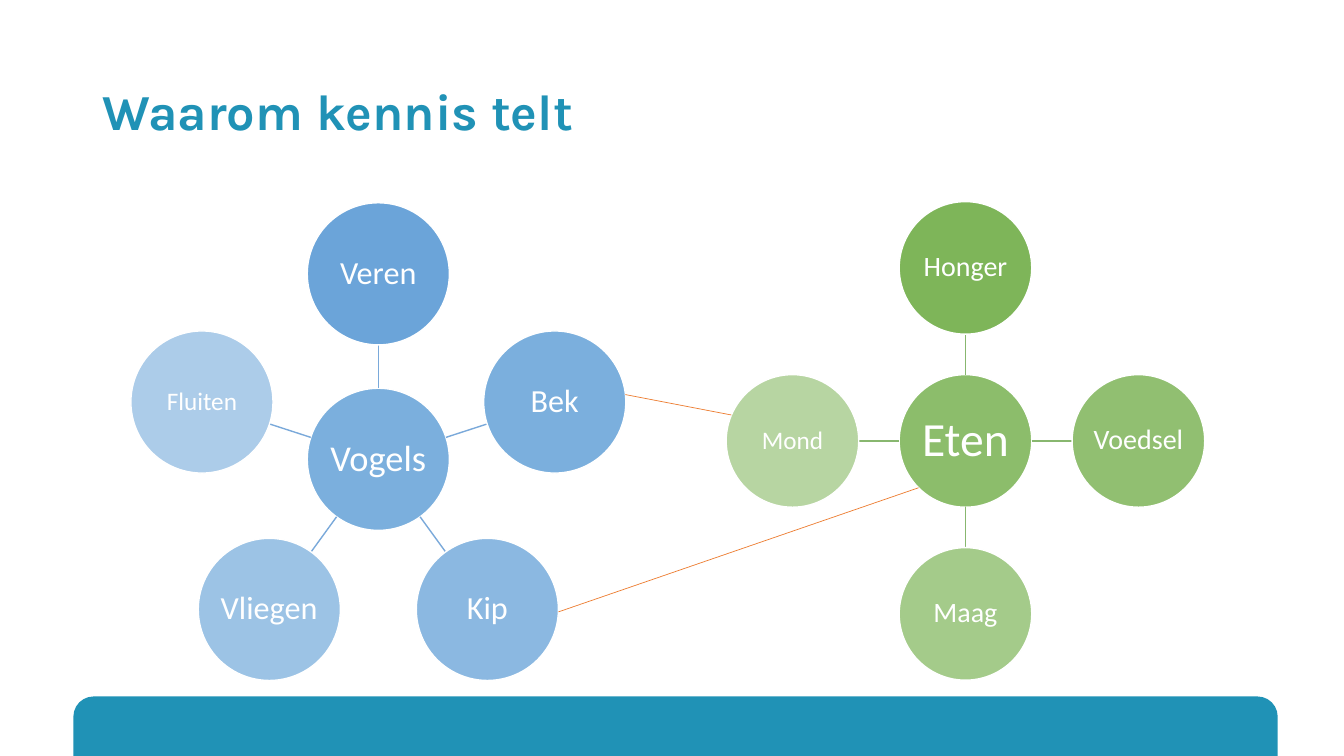
"""Builds the slide "Waarom kennis telt" with two linked concept clusters."""
from math import cos, radians, sin

from lxml import etree
from pptx import Presentation
from pptx.dml.color import RGBColor
from pptx.enum.shapes import MSO_CONNECTOR, MSO_SHAPE
from pptx.enum.text import MSO_ANCHOR, PP_ALIGN
from pptx.oxml.ns import qn
from pptx.util import Cm, Pt

STRAIGHT = MSO_CONNECTOR.STRAIGHT
ELLIPSE = MSO_SHAPE.OVAL
ROUNDED_TOP = MSO_SHAPE.ROUND_2_SAME_RECTANGLE
MIDDLE = MSO_ANCHOR.MIDDLE
LEFT, CENTER = PP_ALIGN.LEFT, PP_ALIGN.CENTER

TEAL = RGBColor(0x20, 0x92, 0xB6)
WHITE = RGBColor(0xFF, 0xFF, 0xFF)
BLUE = RGBColor(0x5B, 0x9B, 0xD5)
BLUE_SPOKE = RGBColor(0x7A, 0xA9, 0xDA)
GREEN = RGBColor(0x70, 0xAD, 0x47)
GREEN_SPOKE = RGBColor(0x88, 0xB7, 0x6F)
ORANGE = RGBColor(0xED, 0x7D, 0x31)

NODE_SHARE = 0.277
LINE_SPACING = 0.9

BIRDS_BOX = (3.07, 5.11, 12.93)
BIRDS_HUB = ("Vogels", 26, 80)
BIRDS_NODES = [("Veren", 23, 90), ("Bek", 23, 80), ("Kip", 23, 70),
               ("Vliegen", 23, 60), ("Fluiten", 18, 50)]
FOOD_BOX = (18.3, 5.08, 12.06)
FOOD_HUB = ("Eten", 34, 80)
FOOD_NODES = [("Honger", 20, 90), ("Voedsel", 20, 77), ("Maag", 20, 63),
              ("Mond", 18, 50)]


def around(center, distance, angle):
    """Return the point at a distance and counterclockwise angle from a centre."""
    x, y = center
    return (x + distance * cos(radians(angle)),
            y - distance * sin(radians(angle)))


def style_text(frame, size, font, color, align, bold=False):
    """Format the single paragraph of a text frame."""
    frame.vertical_anchor = MIDDLE
    paragraph = frame.paragraphs[0]
    paragraph.alignment = align
    paragraph.line_spacing = LINE_SPACING
    run_font = paragraph.runs[0].font
    run_font.name, run_font.size, run_font.bold = font, Pt(size), bold
    run_font.color.rgb = color


def add_link(slide, start, end, color, width):
    """Draw a straight line between two points in centimetres."""
    link = slide.shapes.add_connector(
        STRAIGHT, *(Cm(value) for value in (*start, *end)))
    link.line.color.rgb = color
    link.line.width = Pt(width)
    etree.SubElement(link._element.spPr, qn("a:effectLst"))


def add_node(slide, center, diameter, concept, color):
    """Draw one translucent circle with its word inside."""
    word, size, opacity = concept
    x, y = center
    node = slide.shapes.add_shape(
        ELLIPSE, Cm(x - diameter / 2), Cm(y - diameter / 2),
        Cm(diameter), Cm(diameter))
    node.shadow.inherit = False
    node.fill.solid()
    node.fill.fore_color.rgb = color
    tint = node._element.spPr.find(qn("a:solidFill"))[0]
    etree.SubElement(tint, qn("a:alpha"), val=str(opacity * 1000))
    node.line.color.rgb = WHITE
    node.line.width = Pt(1)
    frame = node.text_frame
    frame.text = word
    frame.word_wrap = False
    frame.margin_left = frame.margin_right = Cm(0.05)
    frame.margin_top = frame.margin_bottom = Cm(0.05)
    style_text(frame, size, "Calibri", WHITE, CENTER)


def add_cluster(slide, box, hub, concepts, color, spoke_color):
    """Draw a hub ringed by concepts; return a lookup of points on their rims."""
    left, top, side = box
    diameter = NODE_SHARE * side
    radius, orbit = diameter / 2, (side - diameter) / 2
    middle = (left + side / 2, top + side / 2)
    centers = {hub[0]: middle}
    add_node(slide, middle, diameter, hub, color)
    for index, concept in enumerate(concepts):
        angle = 90 - index * 360 / len(concepts)
        centers[concept[0]] = around(middle, orbit, angle)
        add_link(slide, around(middle, radius, angle),
                 around(middle, orbit - radius, angle), spoke_color, 1)
        add_node(slide, centers[concept[0]], diameter, concept, color)

    def rim(word, angle):
        """Return the point on the rim of a concept at an angle."""
        return around(centers[word], radius, angle)

    return rim


def add_footer(slide, left, top, width, height):
    """Draw the band with rounded top corners along the slide bottom."""
    band = slide.shapes.add_shape(
        ROUNDED_TOP, Cm(left), Cm(top), Cm(width), Cm(height))
    band.adjustments[0] = 0.34
    band.shadow.inherit = False
    band.fill.solid()
    band.fill.fore_color.rgb = TEAL
    band.line.fill.background()


def set_title(slide, left, top, width, height):
    """Place and format the slide title."""
    title = slide.shapes.title
    title.left, title.top = Cm(left), Cm(top)
    title.width, title.height = Cm(width), Cm(height)
    title.text_frame.text = "Waarom kennis telt"
    style_text(title.text_frame, 36, "Karla", TEAL, LEFT, bold=True)


def main():
    """Build and save the presentation."""
    deck = Presentation()
    deck.slide_width, deck.slide_height = Cm(33.87), Cm(19.05)
    slide = deck.slides.add_slide(deck.slide_layouts[5])
    add_footer(slide, 1.85, 17.55, 30.35, 1.5)
    set_title(slide, 2.33, 1.03, 25, 3.68)
    birds = add_cluster(slide, BIRDS_BOX, BIRDS_HUB, BIRDS_NODES,
                        BLUE, BLUE_SPOKE)
    food = add_cluster(slide, FOOD_BOX, FOOD_HUB, FOOD_NODES,
                       GREEN, GREEN_SPOKE)
    add_link(slide, birds("Bek", 6), food("Mond", 157), ORANGE, 0.5)
    add_link(slide, birds("Kip", -2), food("Eten", 225), ORANGE, 0.5)
    deck.save("out.pptx")


if __name__ == "__main__":
    main()
